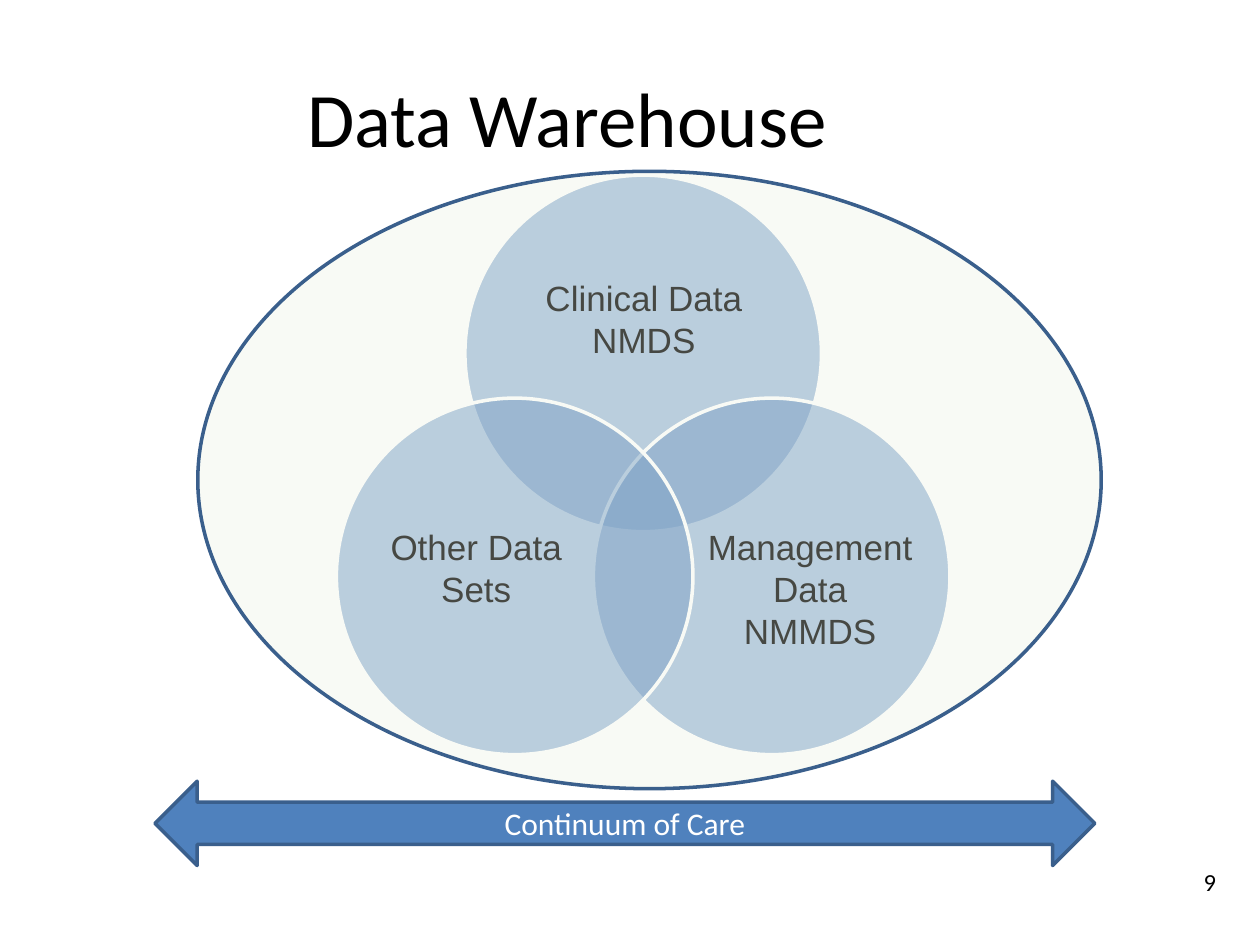
from lxml.etree import SubElement
from pptx import Presentation
from pptx.dml.color import RGBColor
from pptx.enum.shapes import MSO_SHAPE
from pptx.enum.text import MSO_ANCHOR, PP_ALIGN
from pptx.oxml.ns import qn
from pptx.util import Pt

SCALE = 9144
COLORS = {"text": "000000", "white": "FFFFFF", "blue": "4F81BD",
          "outline": "3A5F8C", "cream": "EBF1DE"}
LABEL_FRAME = {"margin_left": 0, "margin_top": 0, "margin_right": 0}
CIRCLE = 283
CIRCLES = [
    ((102, 0), (38, 50, 208, 127), ["Clinical Data", "NMDS"], 0),
    ((204, 177), (87, 73, 170, 156), ["Management Data", "NMMDS"], 0),
    ((0, 177), (26, 73, 170, 156), ["Other Data Sets"], 33),
]


def emu(*lengths):
    """Turn px lengths into EMU."""
    return [length * SCALE for length in lengths]


def color(name):
    """Return a named colour."""
    return RGBColor.from_string(COLORS[name])


def write(shape, lines, size, font="Calibri", ink="text",
          align=PP_ALIGN.CENTER, anchor=MSO_ANCHOR.MIDDLE, **formats):
    """Fill a shape with formatted paragraphs."""
    frame = shape.text_frame
    frame.text = "\n".join(lines)
    frame.word_wrap = True
    frame.vertical_anchor = anchor
    for name, value in formats.items():
        setattr(frame, name, value)
    for paragraph in frame.paragraphs:
        paragraph.alignment = align
        paragraph.font.color.rgb = color(ink)
        for name, value in {"size": Pt(size), "name": font}.items():
            setattr(paragraph.font, name, value)


def add_figure(shapes, kind, box, fill, line, opacity=100):
    """Add a preset shape with a fill, an outline and an opacity in percent."""
    shape = shapes.add_shape(kind, *emu(*box))
    shape.shadow.inherit = False
    shape.fill.solid()
    shape.fill.fore_color.rgb = color(fill)
    shape.line.color.rgb = color(line)
    shape.line.width = Pt(2)
    if opacity < 100:
        fill_color = shape.fill._xPr.find(qn("a:solidFill"))[0]
        SubElement(fill_color, qn("a:alpha"), val=str(opacity * 1000))
    return shape


def add_title(slide, box):
    """Place the slide title."""
    title = slide.shapes.title
    title.left, title.top, title.width, title.height = emu(*box)
    write(title, ["Data Warehouse"], 44)


def add_venn(slide, left, top):
    """Draw three overlapping circles with their labels."""
    shapes = slide.shapes.add_group_shape().shapes
    for (x, y), (label_x, label_y, width, height), lines, bottom in CIRCLES:
        x, y = left + x, top + y
        add_figure(shapes, MSO_SHAPE.OVAL, (x, y, CIRCLE, CIRCLE),
                   "blue", "white", 50)
        label = shapes.add_textbox(
            *emu(x + label_x, y + label_y, width, height))
        write(label, lines, 20, "Arial",
              margin_bottom=bottom * SCALE, **LABEL_FRAME)
        for paragraph in label.text_frame.paragraphs:
            paragraph.line_spacing = Pt(24)


def add_continuum(slide, box):
    """Draw the double arrow with its caption."""
    arrow = add_figure(slide.shapes, MSO_SHAPE.LEFT_RIGHT_ARROW, box,
                       "blue", "outline")
    write(arrow, ["Continuum of Care"], 18, ink="white")


def add_slide_number(slide, box):
    """Write the slide number."""
    number = slide.shapes.add_textbox(*emu(*box))
    write(number, ["9"], 14, align=PP_ALIGN.RIGHT, anchor=MSO_ANCHOR.TOP)


def main():
    """Build and save the presentation."""
    presentation = Presentation()
    presentation.slide_width, presentation.slide_height = emu(1000, 750)
    slide = presentation.slides.add_slide(presentation.slide_layouts[5])
    add_slide_number(slide, (767, 683, 208, 50))
    add_title(slide, (0, 30, 900, 125))
    add_venn(slide, 267, 139)
    add_figure(slide.shapes, MSO_SHAPE.OVAL, (157, 136, 717, 490),
               "cream", "outline", 30)
    add_continuum(slide, (123, 620, 746, 67))
    presentation.save("out.pptx")


if __name__ == "__main__":
    main()
